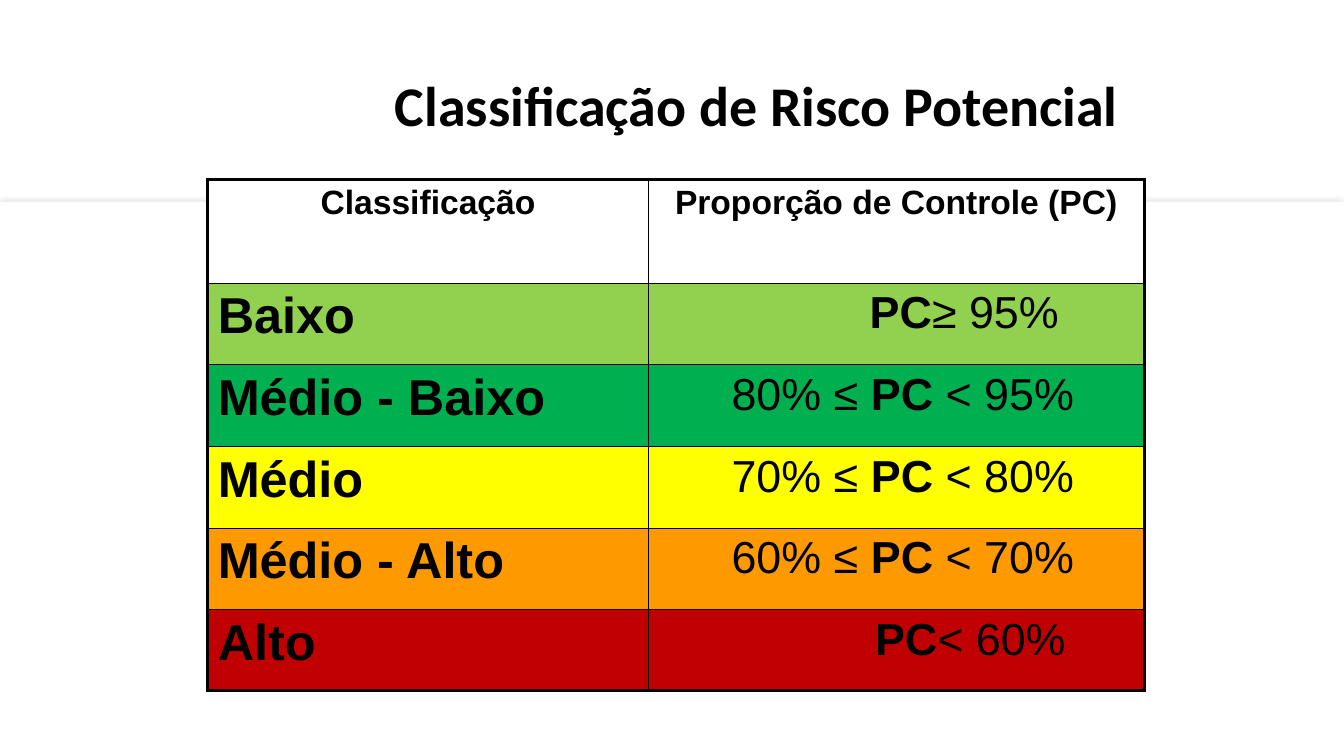
from dataclasses import dataclass

from lxml.etree import SubElement
from pptx import Presentation
from pptx.dml.color import RGBColor
from pptx.enum.shapes import MSO_SHAPE as Shape
from pptx.enum.text import MSO_ANCHOR as Anchor, MSO_AUTO_SIZE as AutoSize, PP_ALIGN as Align
from pptx.oxml.ns import qn
from pptx.util import Inches, Pt


@dataclass(frozen=True)
class Theme:
    title_font: str = "Calibri"
    table_font: str = "Arial"
    title_size: int = 40
    header_size: int = 24
    level_size: int = 36
    range_size: int = 32
    ink: str = "000000"
    paper: str = "FFFFFF"
    shadow: str = "A6A6A6"
    outer_line: float = 2.25
    inner_line: float = 1


THEME = Theme()
COLUMN_WIDTHS = (4.37, 4.92)
ROW_HEIGHTS = (1.03, 0.81, 0.81, 0.81, 0.81, 0.8)
HEADERS = ("Classificação", "Proporção de Controle (PC)")

# Level, fill, text before PC, text after PC, left indent in inches
RISK_LEVELS = (
    ("Baixo", "92D050", "", "≥ 95%", 1.35),
    ("Médio - Baixo", "00B050", "80% ≤ ", " < 95%", 0.13),
    ("Médio", "FFFF00", "70% ≤ ", " < 80%", 0.13),
    ("Médio - Alto", "FF9900", "60% ≤ ", " < 70%", 0.13),
    ("Alto", "C00000", "", "< 60%", 1.47),
)


def add_span(para, text, font, size, bold=True):
    span = para.add_run()
    span.text = text
    span.font.name = font
    span.font.size = Pt(size)
    span.font.bold = bold
    span.font.color.rgb = RGBColor.from_string(THEME.ink)


def add_panel(page):
    """Add the white lower panel with its soft shadow, behind everything else."""
    panel = page.shapes.add_shape(
        Shape.RECTANGLE, Inches(0), Inches(2), Inches(13.33), Inches(5.5))
    panel.fill.solid()
    panel.fill.fore_color.rgb = RGBColor.from_string(THEME.paper)
    panel.line.fill.background()
    panel.shadow.inherit = False
    effects = panel.element.spPr.find(qn("a:effectLst"))
    shadow = SubElement(effects, qn("a:outerShdw"), blurRad=str(Pt(5)),
                        dist="0", dir="0", algn="ctr", rotWithShape="0")
    color = SubElement(shadow, qn("a:srgbClr"), val=THEME.shadow)
    SubElement(color, qn("a:alpha"), val="42000")
    panel.element.getparent().insert(2, panel.element)


def set_title(page, text):
    title = page.shapes.title
    title.left, title.top = Inches(2.21), Inches(0.68)
    title.width, title.height = Inches(8.98), Inches(0.79)
    frame = title.text_frame
    frame.word_wrap = True
    frame.auto_size = AutoSize.NONE
    frame.vertical_anchor = Anchor.MIDDLE
    para = frame.paragraphs[0]
    para.alignment = Align.RIGHT
    para.line_spacing = 0.9
    add_span(para, text, THEME.title_font, THEME.title_size)


def add_borders(cell, outer_sides):
    """Draw all four borders, heavier on the sides at the table's edge."""
    properties = cell._tc.get_or_add_tcPr()
    for side in "LRTB":
        width = THEME.outer_line if side in outer_sides else THEME.inner_line
        line = SubElement(properties, qn(f"a:ln{side}"), w=str(Pt(width)))
        fill = SubElement(line, qn("a:solidFill"))
        SubElement(fill, qn("a:srgbClr"), val=THEME.ink)


def style_cell(table, row, column, fill):
    cell = table.cell(row, column)
    edges = {"L": column == 0, "R": column == len(COLUMN_WIDTHS) - 1,
             "T": row == 0, "B": row == len(ROW_HEIGHTS) - 1}
    add_borders(cell, [side for side, at_edge in edges.items() if at_edge])
    cell.fill.solid()
    cell.fill.fore_color.rgb = RGBColor.from_string(fill)
    return cell.text_frame.paragraphs[0]


def add_risk_table(page):
    table = page.shapes.add_table(
        len(ROW_HEIGHTS), len(COLUMN_WIDTHS), Inches(2.06), Inches(1.78),
        Inches(sum(COLUMN_WIDTHS)), Inches(sum(ROW_HEIGHTS))).table
    table.first_row = table.horz_banding = False
    for column, width in zip(table.columns, COLUMN_WIDTHS):
        column.width = Inches(width)
    for row, height in zip(table.rows, ROW_HEIGHTS):
        row.height = Inches(height)

    for column, header in enumerate(HEADERS):
        para = style_cell(table, 0, column, THEME.paper)
        para.alignment = Align.CENTER
        add_span(para, header, THEME.table_font, THEME.header_size)

    for row, (level, fill, before, after, indent) in enumerate(RISK_LEVELS, 1):
        para = style_cell(table, row, 0, fill)
        add_span(para, level, THEME.table_font, THEME.level_size)

        para = style_cell(table, row, 1, fill)
        para.alignment = Align.CENTER
        para._p.get_or_add_pPr().set("marL", str(Inches(indent)))
        for text, bold in ((before, False), ("PC", True), (after, False)):
            if text:
                add_span(para, text, THEME.table_font, THEME.range_size, bold)


def main():
    deck = Presentation()
    deck.slide_width, deck.slide_height = Inches(13.33), Inches(7.5)
    page = deck.slides.add_slide(deck.slide_layouts[5])
    add_panel(page)
    set_title(page, "Classificação de Risco Potencial")
    add_risk_table(page)
    deck.save("out.pptx")


if __name__ == "__main__":
    main()
